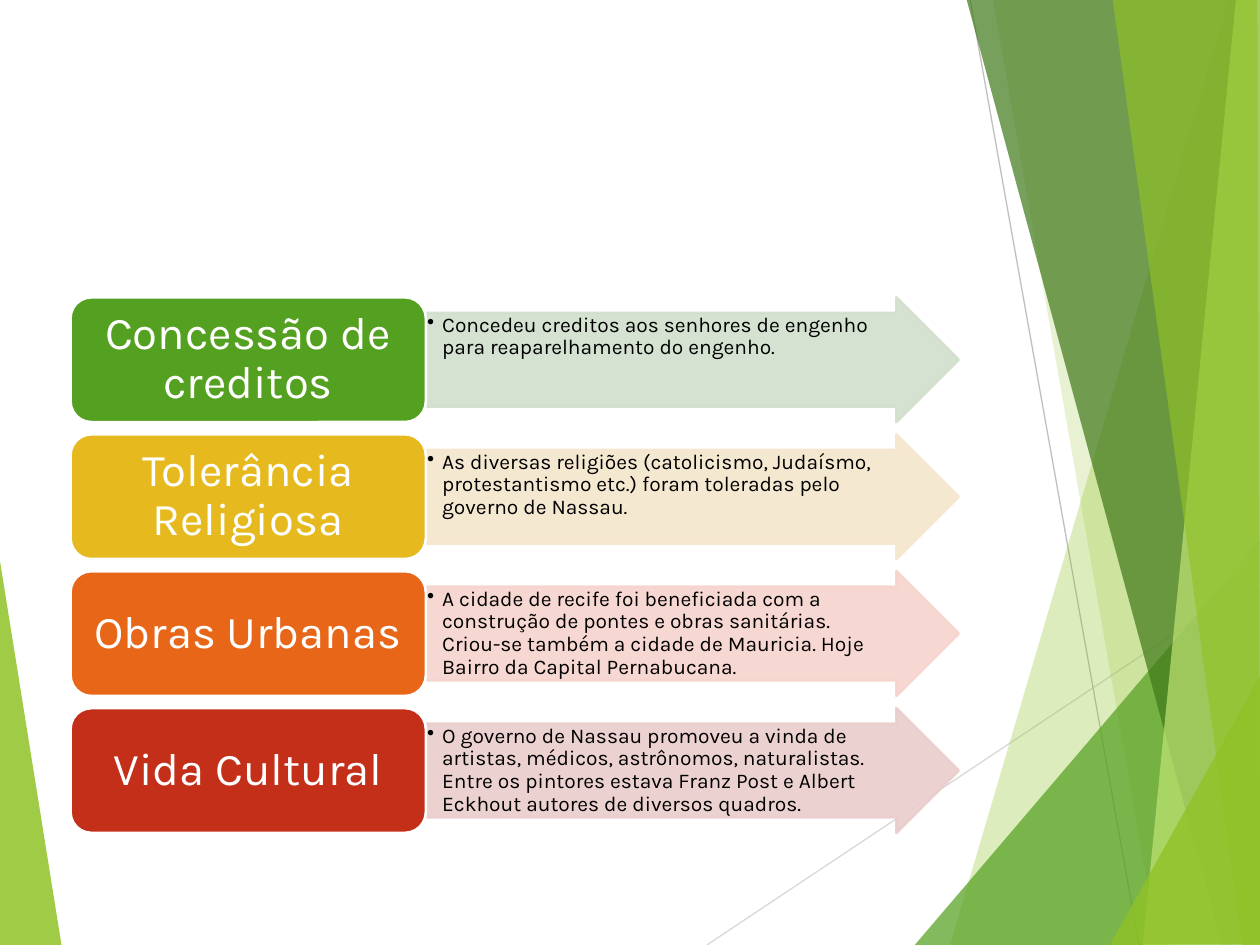
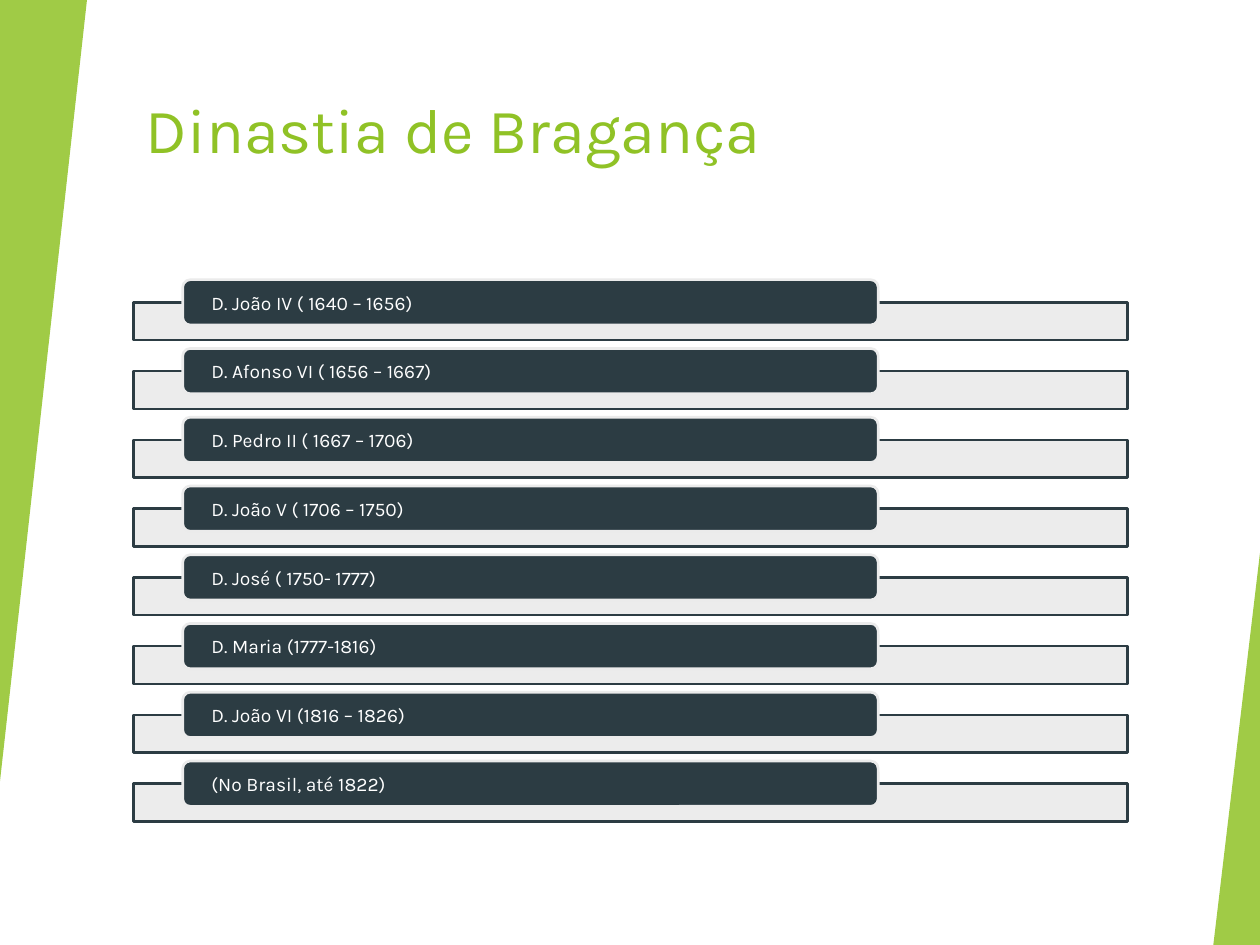
from dataclasses import dataclass
from typing import NamedTuple, Optional

from lxml.etree import SubElement
from pptx import Presentation
from pptx.dml.color import RGBColor
from pptx.enum.shapes import MSO_CONNECTOR, MSO_SHAPE
from pptx.enum.text import MSO_ANCHOR, PP_ALIGN
from pptx.oxml.ns import qn
from pptx.util import Inches, Pt


@dataclass(frozen=True)
class Theme:
    font: str = "Karla"
    lime: str = "90C226"
    green: str = "54A021"
    dark_green: str = "3F7819"
    pale_lime: str = "C0E474"
    slate: str = "2C3C43"
    mist: str = "EBEBEB"
    white: str = "FFFFFF"
    black: str = "000000"
    title_size: int = 36
    label_size: int = 26
    detail_size: int = 12
    reign_size: int = 11
    outline: float = 1.5
    hairline: float = 0.75
    edge_alpha: int = 85


THEME = Theme()


class Box(NamedTuple):
    left: float
    top: float
    width: float
    height: float


class Paint(NamedTuple):
    fill: str
    alpha: int = 100
    line: Optional[str] = None
    line_alpha: int = 100


class TextStyle(NamedTuple):
    size: int
    color: str
    insets: tuple = (0.1, 0.05, 0.1, 0.05)
    align: PP_ALIGN = PP_ALIGN.LEFT
    anchor: MSO_ANCHOR = MSO_ANCHOR.MIDDLE
    spacing: float = 1.0


class Facet(NamedTuple):
    paint: Paint
    points: tuple


class Ray(NamedTuple):
    start: tuple
    end: tuple
    color: str


class Policy(NamedTuple):
    label: str
    detail: str
    color: str
    tint: str


TITLE = TextStyle(THEME.title_size, THEME.lime, anchor=MSO_ANCHOR.TOP)
LABEL = TextStyle(THEME.label_size, THEME.white, (0.11, 0.05, 0.11, 0.05),
                  PP_ALIGN.CENTER, spacing=0.9)
DETAIL = TextStyle(THEME.detail_size, THEME.black, (0.01, 0.01, 0.26, 0.01),
                   anchor=MSO_ANCHOR.TOP, spacing=0.9)
REIGN = TextStyle(THEME.reign_size, THEME.white, (0.21, 0, 0.21, 0))
EDGE = Paint(THEME.lime, THEME.edge_alpha)

# Decorative facets and rays, back to front
LEFT_FACET = Facet(EDGE, ((-0.01, 4.39), (0.49, 7.51), (-0.01, 7.5)))
RAYS = (
    Ray((5.61, 7.5), (10.01, 4.57), "D9D9D9"),
    Ray((7.7, 0), (9.04, 7.5), "BFBFBF"),
)
RIGHT_FACETS = (
    Facet(Paint(THEME.lime, 30), ((9.75, 0), (7.54, 7.5), (10.02, 7.51), (10.01, 0.01))),
    Facet(Paint(THEME.lime, 20), ((7.88, -0.01), (9.19, 7.5), (10.01, 7.5), (10.01, -0.01))),
    Facet(Paint(THEME.green, 72), ((7.26, 7.5), (10, 4.29), (10.01, 7.5))),
    Facet(Paint(THEME.dark_green, 70), ((7.67, -0.01), (9.7, 7.5), (10.01, 7.49), (10.01, -0.01))),
    Facet(Paint(THEME.pale_lime, 70), ((9.81, -0.01), (9.07, 7.5), (10.01, 7.5), (10, -0.01))),
    Facet(Paint(THEME.lime, 65), ((8.83, -0.01), (9.86, 7.5), (10, 7.5), (9.98, -0.01))),
    Facet(Paint(THEME.lime, 80), ((8.81, 7.5), (10.01, 5.35), (10.01, 7.49))),
)

POLICIES = (
    Policy("Concessão de creditos",
           "Concedeu creditos aos senhores de engenho para reaparelhamento do engenho.",
           THEME.green, "D1DFCD"),
    Policy("Tolerância Religiosa",
           "As diversas religiões (catolicismo, Judaísmo, protestantismo etc.) "
           "foram toleradas pelo governo de Nassau.",
           "E6B91E", "F5E6CD"),
    Policy("Obras Urbanas",
           "A cidade de recife foi beneficiada com a construção de pontes e obras "
           "sanitárias. Criou-se também a cidade de Mauricia. Hoje Bairro da "
           "Capital Pernabucana.",
           "E76618", "F6D3CC"),
    Policy("Vida Cultural",
           "O governo de Nassau promoveu a vinda de artistas, médicos, astrônomos, "
           "naturalistas. Entre os pintores estava Franz Post e Albert Eckhout "
           "autores de diversos quadros.",
           "C42F1A", "EACDCD"),
)

REIGNS = (
    "D. João IV ( 1640 – 1656)",
    "D. Afonso VI ( 1656 – 1667)",
    "D. Pedro II ( 1667 – 1706)",
    "D. João V ( 1706 – 1750)",
    "D. José ( 1750- 1777)",
    "D. Maria (1777-1816)",
    "D. João VI (1816 – 1826)",
    "(No Brasil, até 1822)",
)


# Drawing helpers
def row_tops(first: float, last: float, count: int) -> list[float]:
    step = (last - first) / (count - 1)
    return [first + i * step for i in range(count)]


def set_alpha(parent, percent: int) -> None:
    if percent < 100:
        color = next(parent.iter(qn("a:srgbClr")))
        SubElement(color, qn("a:alpha")).set("val", str(percent * 1000))


def apply_paint(sp, paint: Paint) -> None:
    sp.shadow.inherit = False
    sp.fill.solid()
    sp.fill.fore_color.rgb = RGBColor.from_string(paint.fill)
    sp_pr = sp.element.spPr
    set_alpha(sp_pr.find(qn("a:solidFill")), paint.alpha)
    if paint.line is None:
        sp.line.fill.background()
        return
    sp.line.color.rgb = RGBColor.from_string(paint.line)
    sp.line.width = Pt(THEME.outline)
    set_alpha(sp_pr.find(qn("a:ln")), paint.line_alpha)


def add_preset(s, kind: MSO_SHAPE, box: Box, paint: Paint, adjustments: tuple = ()):
    sp = s.shapes.add_shape(kind, *map(Inches, box))
    for i, value in enumerate(adjustments):
        sp.adjustments[i] = value
    apply_paint(sp, paint)
    return sp


def add_facet(s, facet: Facet) -> None:
    points = [(Inches(x), Inches(y)) for x, y in facet.points]
    builder = s.shapes.build_freeform(*points[0])
    builder.add_line_segments(points[1:])
    apply_paint(builder.convert_to_shape(), facet.paint)


def add_ray(s, ray: Ray) -> None:
    line = s.shapes.add_connector(MSO_CONNECTOR.STRAIGHT, *map(Inches, ray.start + ray.end))
    line.line.color.rgb = RGBColor.from_string(ray.color)
    line.line.width = Pt(THEME.hairline)
    SubElement(line.element.spPr, qn("a:effectLst"))


def write_text(sp, text: str, style: TextStyle):
    tf = sp.text_frame
    tf.word_wrap = True
    tf.vertical_anchor = style.anchor
    (tf.margin_left, tf.margin_top,
     tf.margin_right, tf.margin_bottom) = map(Inches, style.insets)
    tf.text = text
    p = tf.paragraphs[0]
    p.alignment = style.align
    p.line_spacing = style.spacing
    font = p.runs[0].font
    font.name = THEME.font
    font.size = Pt(style.size)
    font.color.rgb = RGBColor.from_string(style.color)
    return p


def add_bullet(p, indent: float) -> None:
    p_pr = p._p.get_or_add_pPr()
    p_pr.set("marL", str(Inches(indent)))
    p_pr.set("indent", str(-Inches(indent)))
    SubElement(p_pr, qn("a:buChar")).set("char", "•")


# Slide 1: policies of the Nassau government
def build_policies(s) -> None:
    add_facet(s, LEFT_FACET)
    for ray in RAYS:
        add_ray(s, ray)
    for facet in RIGHT_FACETS:
        add_facet(s, facet)

    for top, policy in zip(row_tops(2.36, 5.62, len(POLICIES)), POLICIES):
        arrow = add_preset(s, MSO_SHAPE.RIGHT_ARROW, Box(3.38, top, 4.23, 0.99),
                           Paint(policy.tint, 90, policy.tint, 90), (0.75, 0.5))
        add_bullet(write_text(arrow, policy.detail, DETAIL), 0.12)
        label = add_preset(s, MSO_SHAPE.ROUNDED_RECTANGLE, Box(0.56, top, 2.82, 0.99),
                           Paint(policy.color, line=THEME.white))
        write_text(label, policy.label, LABEL)


# Slide 2: kings of the dynasty
def build_dynasty(s) -> None:
    title = s.shapes.add_textbox(*map(Inches, Box(1.06, 0.67, 8.36, 1.2)))
    write_text(title, "Dinastia de Bragança", TITLE)

    left_edge = add_preset(s, MSO_SHAPE.ISOSCELES_TRIANGLE, Box(0, 0, 0.69, 6.2), EDGE, (1,))
    left_edge.rotation = 180
    add_preset(s, MSO_SHAPE.ISOSCELES_TRIANGLE, Box(9.63, 4.39, 0.37, 3.11), EDGE, (1,))

    for top, reign in zip(row_tops(2.4, 6.22, len(REIGNS)), REIGNS):
        add_preset(s, MSO_SHAPE.RECTANGLE, Box(1.06, top, 7.89, 0.3),
                   Paint(THEME.mist, 90, THEME.slate))
        pill = add_preset(s, MSO_SHAPE.ROUNDED_RECTANGLE, Box(1.45, top - 0.18, 5.52, 0.36),
                          Paint(THEME.slate, line=THEME.mist))
        write_text(pill, reign, REIGN)


def main() -> None:
    prs = Presentation()
    prs.slide_width, prs.slide_height = Inches(10), Inches(7.5)
    for build in (build_policies, build_dynasty):
        build(prs.slides.add_slide(prs.slide_layouts[6]))
    prs.save("out.pptx")


if __name__ == "__main__":
    main()
